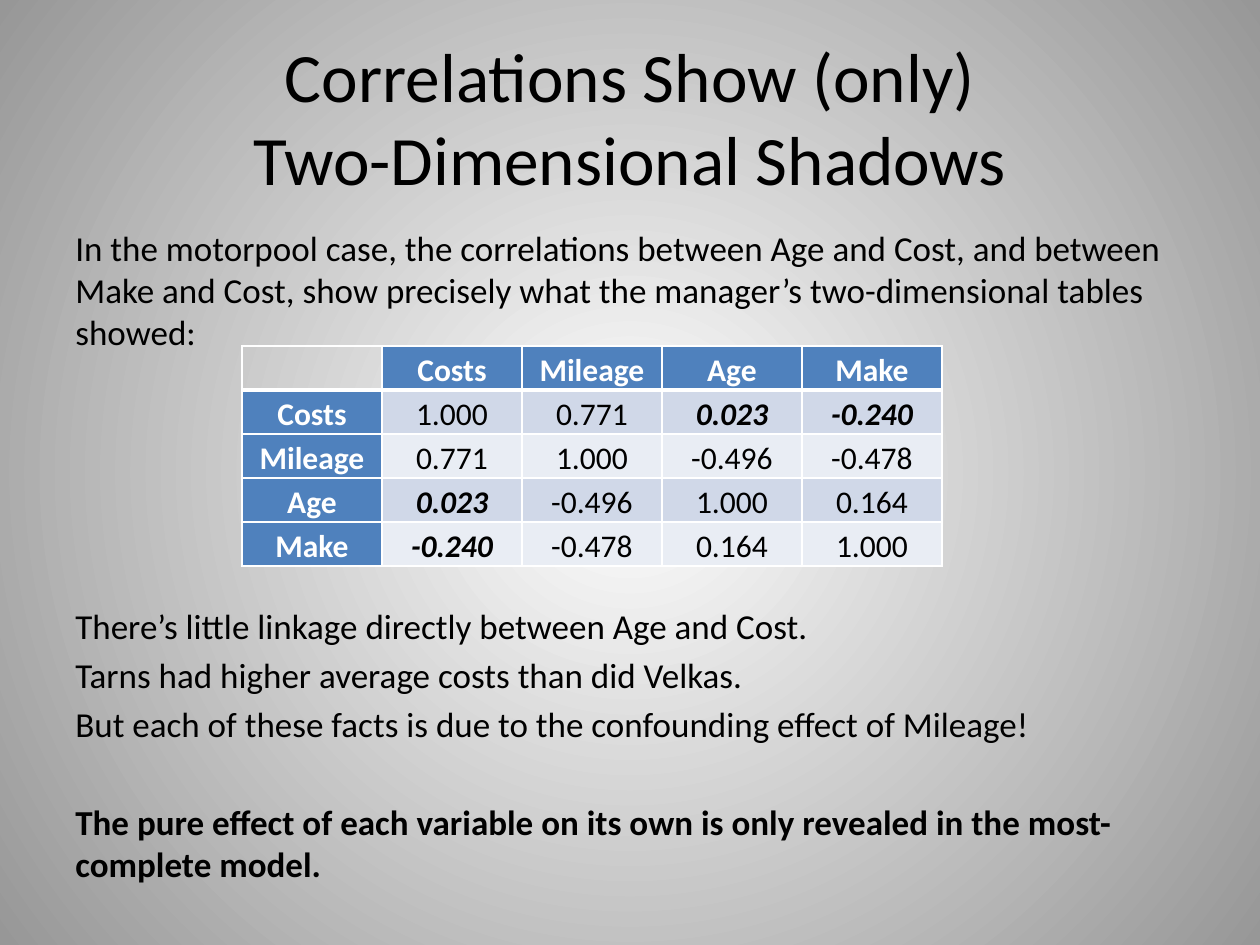
from pptx import Presentation
from pptx.dml.color import RGBColor
from pptx.enum.text import MSO_ANCHOR, PP_ALIGN
from pptx.oxml import parse_xml
from pptx.oxml.ns import nsdecls, qn
from pptx.util import Pt

PX = 914400 // 126
CENTER = PP_ALIGN.CENTER
MIDDLE, BOTTOM = MSO_ANCHOR.MIDDLE, MSO_ANCHOR.BOTTOM
COLORS = {"text": "000000", "white": "FFFFFF", "edge": "979797",
          "header": "4F81BD", "odd": "D0D8E8", "even": "E9EDF4"}


def write(p, text, size, color="text", bold=False, italic=False):
    p.text = text
    for r in p.runs:
        r.font.name = "Calibri"
        r.font.size = Pt(size)
        r.font.bold = bold
        r.font.italic = italic
        r.font.color.rgb = RGBColor.from_string(COLORS[color])


def add_border(cell, side, points):
    cell._tc.get_or_add_tcPr().append(parse_xml(
        f'<a:{side} {nsdecls("a")} w="{Pt(points)}"><a:solidFill>'
        f'<a:srgbClr val="{COLORS["white"]}"/></a:solidFill></a:{side}>'))


prs = Presentation()
prs.slide_width, prs.slide_height = 1260 * PX, 945 * PX
s = prs.slides.add_slide(prs.slide_layouts[6])

# Background: white centre fading to grey
fill = s.background.fill
fill.gradient()
for stop, name in zip(fill.gradient_stops, ("white", "edge")):
    stop.color.rgb = RGBColor.from_string(COLORS[name])
grad = s.element.find(".//" + qn("a:gradFill"))
grad.replace(grad.find(qn("a:lin")), parse_xml(
    f'<a:path {nsdecls("a")} path="circle">'
    '<a:fillToRect l="50000" t="50000" r="50000" b="50000"/></a:path>'))

# Title
title = s.shapes.add_textbox(63 * PX, 38 * PX, 1134 * PX, 157 * PX)
tf = title.text_frame
tf.word_wrap = True
tf.vertical_anchor = MIDDLE
tf.paragraphs[0].alignment = CENTER
write(tf.paragraphs[0], "Correlations Show (only)\vTwo-Dimensional Shadows", 39.6)

# Body: text, space before in points, bold
body_lines = [
    ("In the motorpool case, the correlations between Age and Cost, and between "
     "Make and Cost, show precisely what the manager’s two-dimensional tables "
     "showed:", 4, False),
    ("There’s little linkage directly between Age and Cost.", 144, False),
    ("Tarns had higher average costs than did Velkas.", 4, False),
    ("But each of these facts is due to the confounding effect of Mileage!", 4, False),
    ("The pure effect of each variable on its own is only revealed in the "
     "most-complete model.", 32, True),
]
body = s.shapes.add_textbox(63 * PX, 220 * PX, 1134 * PX, 703 * PX)
tf = body.text_frame
tf.word_wrap = True
for i, (text, gap, bold) in enumerate(body_lines):
    p = tf.add_paragraph() if i else tf.paragraphs[0]
    p.space_before = Pt(gap)
    write(p, text, 20, bold=bold)

# Correlation table
variables = ["Costs", "Mileage", "Age", "Make"]
correlations = [
    ["1.000", "0.771", "0.023", "-0.240"],
    ["0.771", "1.000", "-0.496", "-0.478"],
    ["0.023", "-0.496", "1.000", "0.164"],
    ["-0.240", "-0.478", "0.164", "1.000"],
]
highlighted = {"0.023", "-0.240"}
rows = [["", *variables]]
rows += [[name, *values] for name, values in zip(variables, correlations)]
table = s.shapes.add_table(5, 5, 242 * PX, 346 * PX, 700 * PX, 220 * PX).table
for column in table.columns:
    column.width = 140 * PX
for i, row in enumerate(rows):
    table.rows[i].height = 44 * PX
    for j, text in enumerate(row):
        cell = table.cell(i, j)
        cell.margin_left = cell.margin_right = 0
        cell.margin_top = cell.margin_bottom = 0
        cell.vertical_anchor = BOTTOM
        for side in ("lnL", "lnR", "lnT", "lnB"):
            thick = (i, side) in ((0, "lnB"), (1, "lnT"))
            add_border(cell, side, 3 if thick else 1)
        if not text:
            cell.fill.background()
            continue
        header = i == 0 or j == 0
        name = "header" if header else "odd" if i % 2 else "even"
        cell.fill.solid()
        cell.fill.fore_color.rgb = RGBColor.from_string(COLORS[name])
        p = cell.text_frame.paragraphs[0]
        p.alignment = CENTER
        write(p, text, 18, "white" if header else "text",
              bold=header or text in highlighted, italic=text in highlighted)

prs.save("out.pptx")
